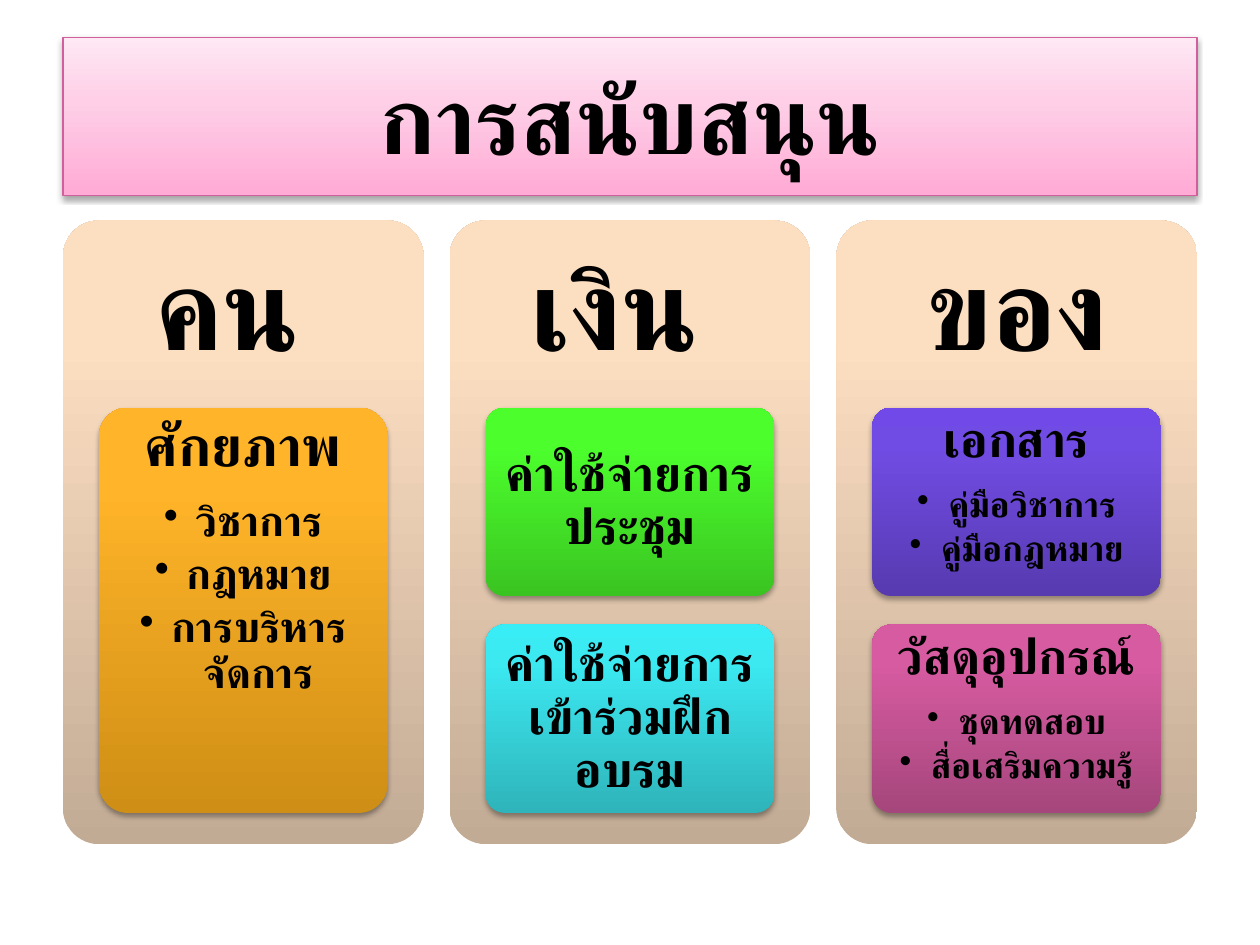
import copy

import pptx
import pptx.dml.color
import pptx.enum.shapes
import pptx.enum.text
import pptx.oxml
import pptx.oxml.ns
import pptx.util

RGB = pptx.dml.color.RGBColor
Pt = pptx.util.Pt
KIND = pptx.enum.shapes.MSO_SHAPE
MID = pptx.enum.text.MSO_ANCHOR.MIDDLE
TOP = pptx.enum.text.MSO_ANCHOR.TOP
MAIN = 'xmlns:a="http://schemas.openxmlformats.org/drawingml/2006/main"'
WIDE, HIGH = pptx.util.Inches(10), pptx.util.Inches(7.5)

BLACK = RGB(0, 0, 0)
EDGE = RGB(0xD0, 0x60, 0x9C)
PINK = RGB(0xFF, 0xAB, 0xD5), RGB(0xFE, 0xCF, 0xE7), RGB(0xFE, 0xE8, 0xF4)
SAND = RGB(0xC2, 0xAB, 0x95), RGB(0xFC, 0xDE, 0xC1), RGB(0xFE, 0xDF, 0xC1)
GOLD = RGB(0xCF, 0x8E, 0x15), RGB(0xFF, 0xB4, 0x29), RGB(0xFF, 0xB5, 0x2B)
GREEN = RGB(0x3A, 0xC4, 0x22), RGB(0x4C, 0xFF, 0x2C), RGB(0x4D, 0xFF, 0x2D)
CYAN = RGB(0x2E, 0xB4, 0xBA), RGB(0x3C, 0xE9, 0xF1), RGB(0x39, 0xED, 0xF6)
BLUE = RGB(0x57, 0x3A, 0xB0), RGB(0x71, 0x4C, 0xE4), RGB(0x70, 0x49, 0xE8)
ROSE = RGB(0xA5, 0x46, 0x7C), RGB(0xD7, 0x5B, 0xA1), RGB(0xDA, 0x59, 0xA2)

FONT = {"name": "Arial", "bold": True}
PARA = {"alignment": pptx.enum.text.PP_ALIGN.CENTER, "line_spacing": 0.9}

COLS = [
    ("คน ", [(GOLD, 32, "ศักยภาพ", 24, ["วิชาการ", "กฎหมาย", "การบริหารจัดการ"])]),
    ("เงิน ", [(GREEN, 28, "ค่าใช้จ่ายการประชุม", 20, []),
              (CYAN, 28, "ค่าใช้จ่ายการเข้าร่วมฝึกอบรม", 20, [])]),
    ("ของ", [(BLUE, 28, "เอกสาร", 20, ["คู่มือวิชาการ", "คู่มือกฎหมาย"]),
             (ROSE, 28, "วัสดุอุปกรณ์", 20, ["ชุดทดสอบ", "สื่อเสริมความรู้"])]),
]


def apply(item, form):
    """Set each attribute named in a dict of format values."""
    for key, value in form.items():
        setattr(item, key, value)


def part(box, left, top, wide, high):
    """Return the box that covers the given shares of another box."""
    x, y, w, h = box
    return [int(v) for v in (x + left * w, y + top * h, wide * w, high * h)]


def paint(shape, tones, mid=80):
    """Fill a shape upward with three tones."""
    shape.fill.gradient()
    shape.fill.gradient_angle = 90
    stops = shape._element.spPr.find(".//" + pptx.oxml.ns.qn("a:gsLst"))
    stops.insert(1, copy.deepcopy(stops[0]))
    for stop, tone, spot in zip(shape.fill.gradient_stops, tones, (0, mid, 100)):
        stop.color.rgb = tone
        stop.position = spot / 100


def shade(shape):
    """Add a soft shadow below a shape."""
    shape._element.spPr.get_or_add_effectLst().append(pptx.oxml.parse_xml(
        f'<a:outerShdw {MAIN} blurRad="{Pt(3.1)}" dist="{Pt(1.8)}" dir="5400000" '
        'rotWithShape="0"><a:srgbClr val="000000"><a:alpha val="35000"/>'
        '</a:srgbClr></a:outerShdw>'))


def block(slide, kind, box, tones, mid=80):
    """Add a shape with a tone fill and no line."""
    shape = slide.shapes.add_shape(kind, *box)
    shape.shadow.inherit = False
    if kind == KIND.ROUNDED_RECTANGLE:
        shape.adjustments[0] = 0.1
    paint(shape, tones, mid)
    shape.line.fill.background()
    return shape


def write(shape, lines, pad, anchor=MID):
    """Write lines of text, size and bullet flag into a shape."""
    frame = shape.text_frame
    side, edge = Pt(pad[0]), Pt(pad[1])
    apply(frame, {"word_wrap": True, "vertical_anchor": anchor,
                  "margin_left": side, "margin_right": side,
                  "margin_top": edge, "margin_bottom": edge})
    for n, (text, size, dot) in enumerate(lines):
        para = frame.add_paragraph() if n else frame.paragraphs[0]
        run = para.add_run()
        run.text = text
        apply(run.font, {**FONT, "size": Pt(size)})
        run.font.color.rgb = BLACK
        apply(para, {**PARA, "space_after": Pt(size * (0.18 if dot else 0.4))})
        if dot:
            para.level = 1
            props = para._p.get_or_add_pPr()
            props.set("marL", str(Pt(18)))
            props.set("indent", str(-Pt(18)))
            props.append(pptx.oxml.parse_xml(f'<a:buChar {MAIN} char="•"/>'))


def banner(slide, box, text):
    """Place the title bar."""
    shape = block(slide, KIND.RECTANGLE, box, PINK, 60)
    shape.line.color.rgb = EDGE
    shape.line.width = Pt(0.75)
    shade(shape)
    write(shape, [(text, 54, False)], (7.2, 3.6))
    shape.text_frame.paragraphs[0].line_spacing = 1.0


def card(slide, box, tones, size, head, small, items):
    """Place one card with a heading and its bullets."""
    shape = block(slide, KIND.ROUNDED_RECTANGLE, box, tones)
    shade(shape)
    lines = [(head, size, False)] + [(item, small, True) for item in items]
    write(shape, lines, (2.5, 1), TOP if items else MID)


def panel(slide, box, head, cards):
    """Place one column with its heading and a stack of cards."""
    block(slide, KIND.ROUNDED_RECTANGLE, box, SAND)
    label = slide.shapes.add_textbox(*part(box, 0, 0, 1, 0.3))
    write(label, [(head, 65, False)], (19.5, 19.5))
    stack = part(box, 0.1, 0.3, 0.8, 0.65)
    gap = 0.07
    high = (1 - gap * (len(cards) - 1)) / len(cards)
    for n, data in enumerate(cards):
        card(slide, part(stack, 0, n * (high + gap), 1, high), *data)


def main():
    """Build the slide and save it."""
    deck = pptx.Presentation()
    apply(deck, {"slide_width": WIDE, "slide_height": HIGH})
    slide = deck.slides.add_slide(deck.slide_layouts[6])
    page = (0, 0, WIDE, HIGH)
    banner(slide, part(page, 0.05, 0.04, 0.9, 1 / 6), "การสนับสนุน")
    body = part(page, 0.05, 7 / 30, 0.9, 0.66)
    wide = 0.318
    step = (1 - wide) / (len(COLS) - 1)
    for n, (head, cards) in enumerate(COLS):
        panel(slide, part(body, n * step, 0, wide, 1), head, cards)
    deck.save("out.pptx")


if __name__ == "__main__":
    main()
